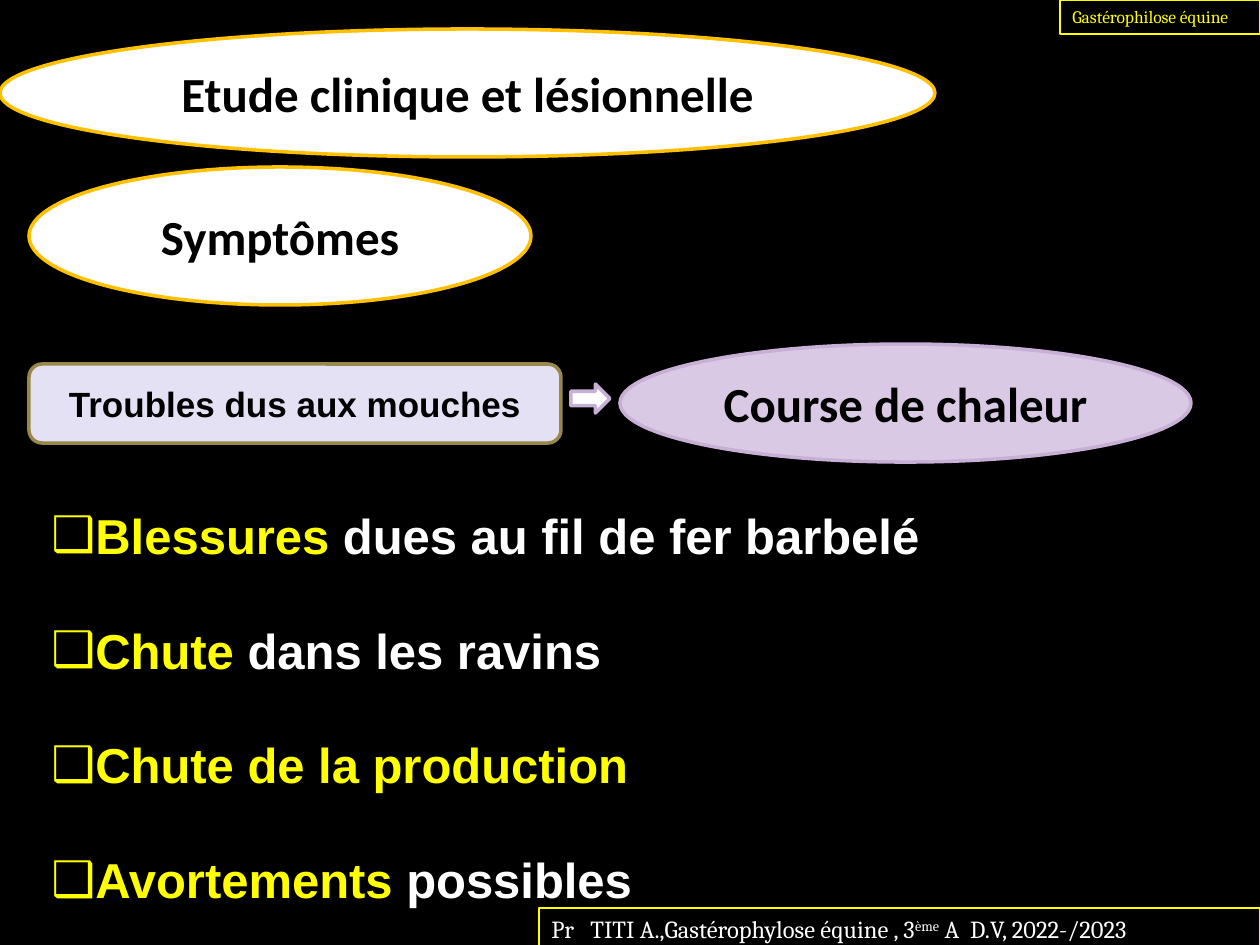
"""Build the slide on the clinical signs of equine gasterophilosis."""
from dataclasses import dataclass

from lxml import etree
from pptx import Presentation, util as u
from pptx.dml.color import RGBColor
from pptx.enum import shapes, text
from pptx.oxml.ns import qn

PX = 914400 / 126
SHAPE = shapes.MSO_SHAPE


@dataclass(frozen=True)
class Theme:
    black: str = "000000"
    white: str = "FFFFFF"
    yellow: str = "FFFF00"
    gold: str = "FFC000"
    lavender: str = "E5E1F4"
    olive: str = "98894B"
    mauve: str = "DAC9E4"
    mauve_line: str = "C8AFD6"
    big: int = 28
    medium: int = 20
    footer: int = 14
    header: int = 10
    gap: int = 32


def px(n):
    return u.Emu(round(n * PX))


def rgb(color):
    return RGBColor.from_string(color)


def add_text(p, words, *, size, color, font, bold=False, raised=False):
    r = p.add_run()
    r.text = words
    r.font.size, r.font.name, r.font.bold = u.Pt(size), font, bold
    r.font.color.rgb = rgb(color)
    if raised:
        r.font._element.set("baseline", "30000")


class Deck:
    def __init__(self, theme):
        self.t = theme
        self.prs = Presentation()
        self.prs.slide_width, self.prs.slide_height = px(1260), px(945)
        self.s = self.prs.slides.add_slide(self.prs.slide_layouts[6])
        self.s.background.fill.solid()
        self.s.background.fill.fore_color.rgb = rgb(theme.black)

    def shape(self, kind, box, line, fill=None, width=2):
        sp = self.s.shapes.add_shape(kind, *map(px, box))
        sp.shadow.inherit = False
        if fill:
            sp.fill.solid()
            sp.fill.fore_color.rgb = rgb(fill)
        else:
            sp.fill.background()
        sp.line.color.rgb = rgb(line)
        sp.line.width = u.Pt(width)
        return sp

    def label(self, kind, box, line, fill, words, size, font):
        tf = self.shape(kind, box, line, fill).text_frame
        tf.vertical_anchor = text.MSO_ANCHOR.MIDDLE
        p = tf.paragraphs[0]
        p.alignment = text.PP_ALIGN.CENTER
        add_text(p, words, size=size, color=self.t.black, font=font, bold=True)

    def caption(self, box, runs, size, color, wrap=True):
        tf = self.shape(SHAPE.RECTANGLE, box, self.t.yellow, width=0.75).text_frame
        tf.word_wrap = wrap
        tf.auto_size = text.MSO_AUTO_SIZE.SHAPE_TO_FIT_TEXT
        tf.vertical_anchor = text.MSO_ANCHOR.TOP
        p = tf.paragraphs[0]
        p.alignment = text.PP_ALIGN.LEFT
        for words, raised in runs:
            add_text(p, words, size=size, color=color, font="Cambria", raised=raised)

    def bullets(self, box, items):
        tf = self.s.shapes.add_textbox(*map(px, box)).text_frame
        tf.word_wrap = True
        tf.auto_size = text.MSO_AUTO_SIZE.SHAPE_TO_FIT_TEXT
        tf.vertical_anchor = text.MSO_ANCHOR.MIDDLE
        for i, (lead, rest) in enumerate(items):
            p = tf.add_paragraph() if i else tf.paragraphs[0]
            if i:
                p.space_before = u.Pt(self.t.gap)
            pPr = p._p.get_or_add_pPr()
            pPr.set("marL", str(px(44)))
            pPr.set("indent", str(-px(44)))
            etree.SubElement(pPr, qn("a:buFont")).set("typeface", "Arial")
            etree.SubElement(pPr, qn("a:buChar")).set("char", "❑")
            for words, color in ((lead, self.t.yellow), (rest, self.t.white)):
                if words:
                    add_text(p, words, size=self.t.big, color=color, font="Arial", bold=True)


def main():
    t = Theme()
    d = Deck(t)
    d.label(SHAPE.OVAL, (0, 29, 935, 128), t.gold, t.white,
            "Etude clinique et lésionnelle", t.big, "Calibri")
    d.label(SHAPE.OVAL, (29, 167, 502, 138), t.gold, t.white,
            "Symptômes", t.big, "Calibri")
    d.label(SHAPE.ROUNDED_RECTANGLE, (29, 364, 532, 79), t.olive, t.lavender,
            "Troubles dus aux mouches", t.medium, "Arial")
    d.bullets((39, 493, 916, 428), [
        ("Blessures", " dues au fil de fer barbelé"),
        ("Chute ", "dans les ravins"),
        ("Chute de la production", ""),
        ("Avortements", " possibles"),
    ])
    d.label(SHAPE.OVAL, (620, 344, 571, 118), t.mauve_line, t.mauve,
            "Course de chaleur", t.big, "Calibri")
    d.shape(SHAPE.RIGHT_ARROW, (571, 384, 39, 29), t.mauve_line, t.white)
    d.caption((1060, 0, 200, 34), [("Gastérophilose équine", False)],
              t.header, t.yellow, wrap=False)
    d.caption((539, 908, 721, 43), [
        ("Pr   TITI A.,Gastérophylose équine , 3", False),
        ("ème", True),
        (" A  D.V, 2022-/2023", False),
    ], t.footer, t.white)
    d.prs.save("out.pptx")


if __name__ == "__main__":
    main()
